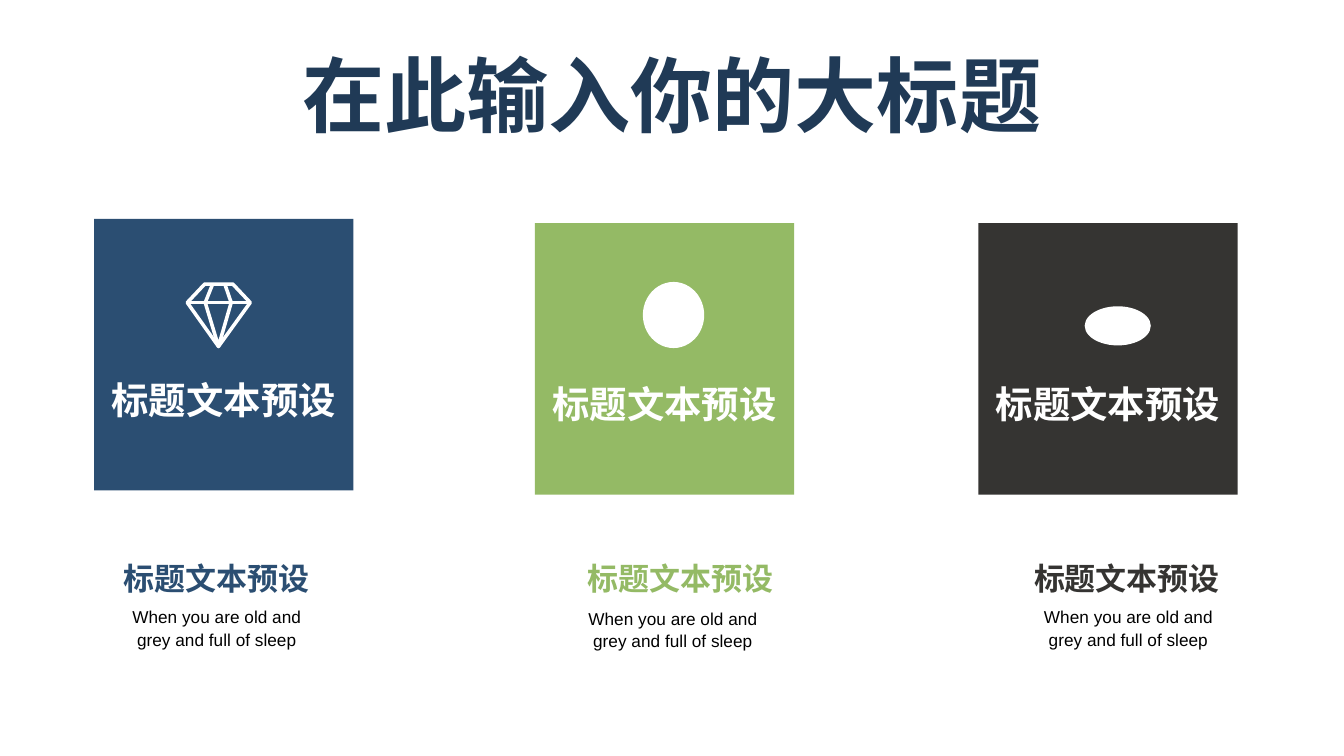
from dataclasses import dataclass

import pptx
import pptx.dml.color
import pptx.enum.shapes
import pptx.enum.text
import pptx.util

Cm = pptx.util.Cm
Pt = pptx.util.Pt
RGBColor = pptx.dml.color.RGBColor
MSO_SHAPE = pptx.enum.shapes.MSO_SHAPE
ANCHOR = pptx.enum.text.MSO_ANCHOR

NAVY = RGBColor(0x20, 0x3A, 0x56)
BLUE = RGBColor(0x2B, 0x4E, 0x72)
GREEN = RGBColor(0x94, 0xBA, 0x65)
CHARCOAL = RGBColor(0x35, 0x34, 0x32)
WHITE = RGBColor(0xFF, 0xFF, 0xFF)
BLACK = RGBColor(0, 0, 0)

CARD_LABEL = "标题文本预设"
CAPTION = "When you are old and grey and full of sleep"
CARD_WIDTH, CARD_HEIGHT = 4.9, 5.13
CAPTION_WIDTH = 4.39
HEADING_TOP = 10.46

# Diamond strokes in hundredths of a centimetre
DIAMOND_OUTLINE = [(3, 38), (36, 3), (89, 3), (122, 38), (62, 121), (3, 38)]
DIAMOND_GIRDLE = [(3, 38), (122, 38)]
DIAMOND_FACETS = [(51, 3), (37, 38), (62, 121), (86, 38), (74, 3)]


@dataclass(frozen=True)
class Box:
    """Position and size in centimetres."""
    left: float
    top: float
    width: float
    height: float

    def lengths(self) -> list:
        return [Cm(v) for v in (self.left, self.top, self.width, self.height)]


@dataclass(frozen=True)
class Topic:
    colour: RGBColor
    card_left: float
    card_top: float
    heading_left: float
    caption_left: float
    caption_top: float


TOPICS = [
    Topic(BLUE, 1.78, 4.14, 1.9, 1.9, 11.3),
    Topic(GREEN, 10.11, 4.22, 10.67, 10.52, 11.33),
    Topic(CHARCOAL, 18.49, 4.22, 19.1, 19.13, 11.3),
]
ROUND_ICONS = [Box(12.15, 5.33, 1.16, 1.25), Box(20.5, 5.79, 1.25, 0.74)]


def write(frame, text: str, size: float, colour: RGBColor,
          bold: bool = True, spacing: float = 1.0, **frame_format) -> None:
    """Fill a text frame with one centred paragraph."""
    for name, value in frame_format.items():
        setattr(frame, name, value)
    line = frame.paragraphs[0]
    line.text = text
    line.alignment = pptx.enum.text.PP_ALIGN.CENTER
    line.line_spacing = spacing
    font = line.runs[0].font
    for name, value in {"name": "Arial", "size": Pt(size), "bold": bold}.items():
        setattr(font, name, value)
    font.color.rgb = colour


def add_filled(slide, kind: MSO_SHAPE, box: Box, colour: RGBColor):
    filled = slide.shapes.add_shape(kind, *box.lengths())
    filled.shadow.inherit = False
    filled.fill.solid()
    filled.fill.fore_color.rgb = colour
    filled.line.fill.background()
    return filled


def add_topic(slide, topic: Topic) -> None:
    """Draw a coloured card with its heading and caption below."""
    card = add_filled(slide, MSO_SHAPE.RECTANGLE,
                      Box(topic.card_left, topic.card_top, CARD_WIDTH, CARD_HEIGHT),
                      topic.colour)
    write(card.text_frame, CARD_LABEL, 20, WHITE, word_wrap=False,
          vertical_anchor=ANCHOR.MIDDLE, margin_top=Cm(1.83))

    heading = slide.shapes.add_textbox(
        *Box(topic.heading_left, HEADING_TOP, CAPTION_WIDTH, 0.86).lengths())
    write(heading.text_frame, CARD_LABEL, 16.6, topic.colour, word_wrap=False)

    caption = slide.shapes.add_textbox(
        *Box(topic.caption_left, topic.caption_top, CAPTION_WIDTH, 1.17).lengths())
    write(caption.text_frame, CAPTION, 9.2, BLACK, bold=False, spacing=1.1,
          word_wrap=True)


def add_diamond(slide, left: float, top: float) -> None:
    builder = slide.shapes.build_freeform(*DIAMOND_OUTLINE[0], scale=Cm(0.01))
    builder.add_line_segments(DIAMOND_OUTLINE[1:], close=True)
    for stroke in (DIAMOND_GIRDLE, DIAMOND_FACETS):
        builder.move_to(*stroke[0])
        builder.add_line_segments(stroke[1:], close=False)
    diamond = builder.convert_to_shape(Cm(left), Cm(top))
    diamond.shadow.inherit = False
    diamond.fill.background()
    diamond.line.color.rgb = WHITE
    diamond.line.width = Pt(1.9)


def main() -> None:
    deck = pptx.Presentation()
    deck.slide_width, deck.slide_height = Cm(25.4), Cm(14.29)
    slide = deck.slides.add_slide(deck.slide_layouts[5])

    title = slide.shapes.title
    title_box = Box(1.27, 0.58, 22.86, 2.39)
    for name, value in zip(("left", "top", "width", "height"), title_box.lengths()):
        setattr(title, name, value)
    write(title.text_frame, "在此输入你的大标题", 44, NAVY, word_wrap=True,
          vertical_anchor=ANCHOR.MIDDLE)

    for topic in TOPICS:
        add_topic(slide, topic)
    add_diamond(slide, 3.51, 5.34)
    for icon in ROUND_ICONS:
        add_filled(slide, MSO_SHAPE.OVAL, icon, WHITE)

    deck.save("out.pptx")


if __name__ == "__main__":
    main()
